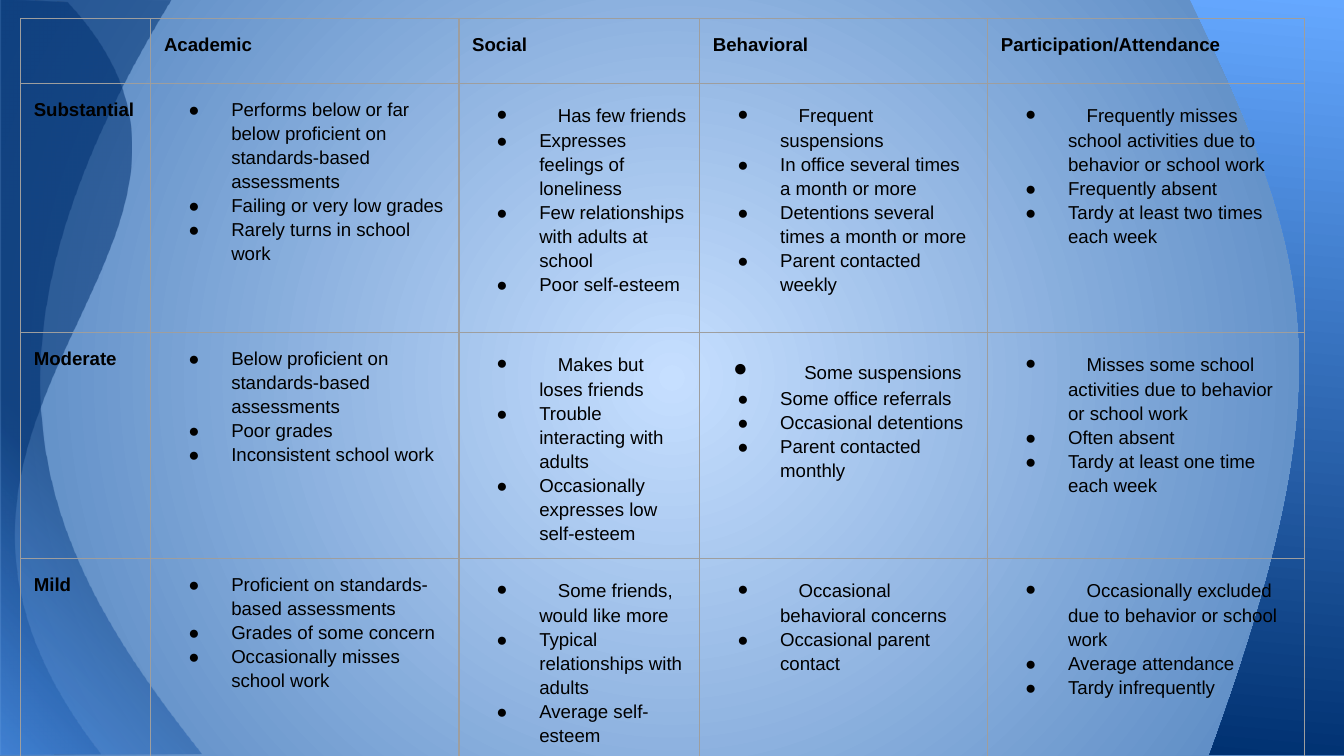
from collections import namedtuple
from dataclasses import dataclass

from lxml.etree import SubElement
from pptx import Presentation
from pptx.dml.color import RGBColor
from pptx.oxml import parse_xml
from pptx.oxml.ns import nsdecls, qn
from pptx.util import Cm, Pt

Box = namedtuple("Box", "left top width height")  # centimetres


@dataclass(frozen=True)
class Theme:
    font: str = "Arial"
    text: str = "000000"
    border: str = "9E9E9E"
    size: int = 10
    large_size: int = 13
    border_width: float = 0.75
    line_spacing: float = 1.15
    page_stops: tuple = ((0, "C6DFFF", 100), (100, "4F81BD", 100))
    left_stops: tuple = ((0, "549FFF", 54), (41, "003171", 54), (100, "003171", 54))
    right_stops: tuple = ((0, "65A8FF", 100), (100, "003171", 100))


THEME = Theme()
CENTRE = '<a:path path="circle"><a:fillToRect l="50000" t="50000" r="50000" b="50000"/></a:path>'
BOTTOM_LEFT = '<a:path path="circle"><a:fillToRect t="100000" r="100000"/></a:path>'
DOWNWARD = '<a:lin ang="5700000" scaled="0"/>'

# Each wave: straight corners, then a curve (start, two controls, end)
LEFT_WAVES = [
    ([(-0.03, 14.27), (-0.03, -0.05)],
     [(3.23, 0), (-0.97, 6.91), (0.84, 10.49), (3.81, 14.25)]),
    ([(0.03, 14.27), (0.03, 0)],
     [(1.27, 0.05), (5.51, 4.62), (-3.1, 7.82), (1.9, 14.25)]),
]
RIGHT_WAVE = ([(25.53, -0.03), (25.53, 14.27)],
              [(22.86, 14.27), (25.43, 7.21), (24.92, 4.98), (22.48, -0.03)])

HEADINGS = ["", "Academic", "Social", "Behavioral", "Participation/Attendance"]
LEVELS = {
    "Substantial": [
        ["Performs below or far below proficient on standards-based assessments",
         "Failing or very low grades", "Rarely turns in school work"],
        ["Has few friends", "Expresses feelings of loneliness",
         "Few relationships with adults at school", "Poor self-esteem"],
        ["Frequent suspensions", "In office several times a month or more",
         "Detentions several times a month or more", "Parent contacted weekly"],
        ["Frequently misses school activities due to behavior or school work",
         "Frequently absent", "Tardy at least two times each week"],
    ],
    "Moderate": [
        ["Below proficient on standards-based assessments", "Poor grades",
         "Inconsistent school work"],
        ["Makes but loses friends", "Trouble interacting with adults",
         "Occasionally expresses low self-esteem"],
        ["Some suspensions", "Some office referrals", "Occasional detentions",
         "Parent contacted monthly"],
        ["Misses some school activities due to behavior or school work",
         "Often absent", "Tardy at least one time each week"],
    ],
    "Mild": [
        ["Proficient on standards-based assessments", "Grades of some concern",
         "Occasionally misses school work"],
        ["Some friends, would like more", "Typical relationships with adults",
         "Average self-esteem"],
        ["Occasional behavioral concerns", "Occasional parent contact"],
        ["Occasionally excluded due to behavior or school work",
         "Average attendance", "Tardy infrequently"],
    ],
}
COLUMN_SHARES = [2.46, 5.82, 4.55, 5.44, 5.99]
ROW_SHARES = [1.23, 4.7, 4.27, 3.8]
WIDE_SPACE = "　"  # opens the first item in every column but Academic


def set_gradient(parent, stops, direction):
    """Replace the solid fill of a properties element by a gradient."""
    marks = "".join(
        f'<a:gs pos="{place * 1000}"><a:srgbClr val="{color}">'
        f'<a:alpha val="{opacity * 1000}"/></a:srgbClr></a:gs>'
        for place, color, opacity in stops)
    gradient = parse_xml(f'<a:gradFill {nsdecls("a")} rotWithShape="1">'
                         f'<a:gsLst>{marks}</a:gsLst>{direction}</a:gradFill>')
    parent.replace(parent.find(qn("a:solidFill")), gradient)


def bend_last_lines(shape):
    """Turn the last three line segments into one cubic curve."""
    lines = list(shape.element.iter(qn("a:lnTo")))[-3:]
    curve = parse_xml(f'<a:cubicBezTo {nsdecls("a")}/>')
    lines[0].addprevious(curve)
    for line in lines:
        curve.append(line[0])
        line.getparent().remove(line)


def add_wave(page, box, wave, stops, direction):
    corners, curve = wave
    points = [(Cm(box.left + x), Cm(box.top + y)) for x, y in corners + curve]
    builder = page.shapes.build_freeform(*points[0])
    builder.add_line_segments(points[1:], close=True)
    shape = builder.convert_to_shape()
    bend_last_lines(shape)
    shape.shadow.inherit = False
    shape.line.fill.background()
    shape.fill.solid()
    set_gradient(shape.element.spPr, stops, direction)


def add_backdrop(page, box):
    page.background.fill.solid()
    set_gradient(page.element.find(".//" + qn("p:bgPr")), THEME.page_stops, CENTRE)
    for wave in LEFT_WAVES:
        add_wave(page, box, wave, THEME.left_stops, BOTTOM_LEFT)
    add_wave(page, box, RIGHT_WAVE, THEME.right_stops, DOWNWARD)


def add_text(para, text, size=THEME.size, bold=False):
    para.line_spacing = THEME.line_spacing
    span = para.add_run()
    span.text = text
    span.font.name = THEME.font
    span.font.size = Pt(size)
    span.font.bold = bold
    span.font.color.rgb = RGBColor.from_string(THEME.text)


def add_bullet(para, hanging):
    properties = para._p.get_or_add_pPr()
    properties.set("marL", str(Cm(1.27)))
    properties.set("indent", str(-Cm(hanging)))
    color = SubElement(properties, qn("a:buClr"))
    SubElement(color, qn("a:srgbClr")).set("val", THEME.text)
    SubElement(properties, qn("a:buFont")).set("typeface", THEME.font)
    SubElement(properties, qn("a:buChar")).set("char", "●")


def format_cell(cell):
    cell.margin_left = cell.margin_right = Cm(0.25)
    cell.margin_top = cell.margin_bottom = Cm(0.25)
    cell.fill.background()
    properties = cell._tc.get_or_add_tcPr()
    for place, side in enumerate(("lnL", "lnR", "lnT", "lnB")):
        properties.insert(place, parse_xml(
            f'<a:{side} {nsdecls("a")} w="{Pt(THEME.border_width)}"><a:solidFill>'
            f'<a:srgbClr val="{THEME.border}"/></a:solidFill></a:{side}>'))


def fill_list(cell, items, spaced, large_space):
    frame = cell.text_frame
    for number, item in enumerate(items):
        para = frame.add_paragraph() if number else frame.paragraphs[0]
        first = spaced and number == 0
        enlarged = first and large_space
        if enlarged:
            add_text(para, WIDE_SPACE, size=THEME.large_size)
        add_text(para, WIDE_SPACE + item if first and not enlarged else item)
        add_bullet(para, hanging=0.89 if enlarged else 0.81)


def add_levels_table(page, box):
    frame = page.shapes.add_table(len(ROW_SHARES), len(COLUMN_SHARES), *map(Cm, box))
    table = frame.table
    table.first_row = table.horz_banding = False
    for column, share in zip(table.columns, COLUMN_SHARES):
        column.width = Cm(box.width * share / sum(COLUMN_SHARES))
    for row, share in zip(table.rows, ROW_SHARES):
        row.height = Cm(box.height * share / sum(ROW_SHARES))
    for cell in table.iter_cells():
        format_cell(cell)

    # Heading row
    table.cell(0, 0).text_frame.paragraphs[0].font.size = Pt(THEME.size)
    for column, heading in enumerate(HEADINGS[1:], 1):
        add_text(table.cell(0, column).text_frame.paragraphs[0], heading, bold=True)

    # One row for each level
    for row, (level, lists) in enumerate(LEVELS.items(), 1):
        add_text(table.cell(row, 0).text_frame.paragraphs[0], level, bold=True)
        for column, items in enumerate(lists, 1):
            fill_list(table.cell(row, column), items, spaced=column > 1,
                      large_space=(level, HEADINGS[column]) == ("Moderate", "Behavioral"))


def main():
    deck = Presentation()
    deck.slide_width, deck.slide_height = Cm(25.4), Cm(14.29)
    page = deck.slides.add_slide(deck.slide_layouts[6])
    add_backdrop(page, Box(0, 0, 25.4, 14.29))
    add_levels_table(page, Box(0.39, 0.35, 24.27, 14))
    deck.save("out.pptx")


if __name__ == "__main__":
    main()
